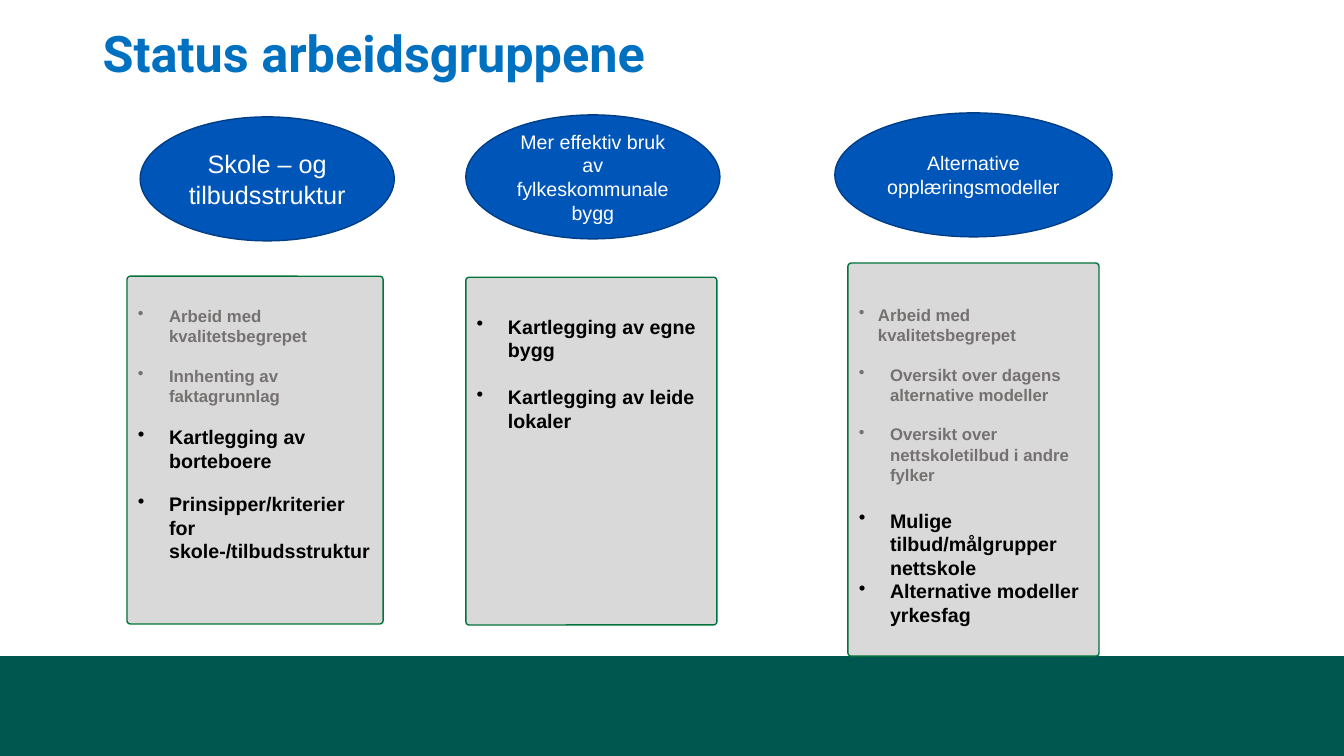
import pptx
import pptx.util
import pptx.dml.color
import pptx.enum.shapes
import pptx.enum.text
import pptx.oxml.ns
import lxml.etree

SHAPES = pptx.enum.shapes.MSO_SHAPE
ALIGN = pptx.enum.text.PP_ALIGN
ANCHOR = pptx.enum.text.MSO_ANCHOR
DONE, OPEN = ("767171", 12), ("000000", 14)

WIDTH, HEIGHT = 13.33, 7.5
BAR_TOP = 6.51
OVAL_HEIGHT = 1.23
INSET = 0.1

# Each item: text, (colour, size), space before, indent
GROUPS = [
    {
        "name": "Skole – og tilbudsstruktur", "size": 18,
        "oval": (1.39, 1.16, 2.52), "card": (1.26, 2.74, 2.54, 3.45), "top": 0.28,
        "items": [
            ("Arbeid med kvalitetsbegrepet", DONE, 0, 0.31),
            ("Innhenting av faktagrunnlag", DONE, 14, 0.31),
            ("Kartlegging av borteboere", OPEN, 14, 0.31),
            ("Prinsipper/kriterier for skole-/tilbudsstruktur", OPEN, 14, 0.31),
        ],
    },
    {
        "name": "Mer effektiv bruk av fylkeskommunale bygg", "size": 14,
        "oval": (4.62, 1.14, 2.52), "card": (4.62, 2.75, 2.49, 3.45), "top": 0.36,
        "items": [
            ("Kartlegging av egne bygg", OPEN, 0, 0.31),
            ("Kartlegging av leide lokaler", OPEN, 17, 0.31),
        ],
    },
    {
        "name": "Alternative opplæringsmodeller", "size": 14,
        "oval": (8.28, 1.12, 2.75), "card": (8.41, 2.61, 2.49, 3.9), "top": 0.4,
        "items": [
            ("Arbeid med kvalitetsbegrepet", DONE, 0, 0.19),
            ("Oversikt over dagens alternative modeller", DONE, 14, 0.31),
            ("Oversikt over nettskoletilbud i andre fylker", DONE, 14, 0.31),
            ("Mulige tilbud/målgrupper nettskole", OPEN, 17, 0.31),
            ("Alternative modeller yrkesfag", OPEN, 0, 0.31),
        ],
    },
]


def colour(value):
    return pptx.dml.color.RGBColor.from_string(value)


def box(*lengths):
    return [pptx.util.Inches(length) for length in lengths]


def add_panel(slide, kind, place, fill, line=None):
    shape = slide.shapes.add_shape(kind, *box(*place))
    shape.shadow.inherit = False
    shape.fill.solid()
    shape.fill.fore_color.rgb = colour(fill)
    if line:
        shape.line.color.rgb = colour(line)
        shape.line.width = pptx.util.Pt(1)
    else:
        shape.line.fill.background()
    return shape


def prepare_frame(shape, anchor, top=0.05):
    frame = shape.text_frame
    frame.word_wrap = True
    frame.vertical_anchor = anchor
    frame.margin_left = frame.margin_right = pptx.util.Inches(INSET)
    frame.margin_top = pptx.util.Inches(top)
    return frame


def write(paragraph, text, size, ink, font="Arial", bold=False,
          align=ALIGN.LEFT, before=0, spacing=1.0, indent=0):
    if indent:
        properties = paragraph._p.get_or_add_pPr()
        properties.set("marL", str(pptx.util.Inches(indent)))
        properties.set("indent", str(-pptx.util.Inches(indent)))
        bullet = lxml.etree.SubElement(properties, pptx.oxml.ns.qn("a:buChar"))
        bullet.set("char", "•")
    paragraph.alignment = align
    paragraph.space_before = pptx.util.Pt(before)
    paragraph.line_spacing = spacing
    run = paragraph.add_run()
    run.text = text
    run.font.name = font
    run.font.size = pptx.util.Pt(size)
    run.font.bold = bold
    run.font.color.rgb = colour(ink)


def add_group(slide, group):
    oval = add_panel(slide, SHAPES.OVAL, (*group["oval"], OVAL_HEIGHT), "0055B8", "003F88")
    frame = prepare_frame(oval, ANCHOR.MIDDLE)
    write(frame.paragraphs[0], group["name"], group["size"], "FFFFFF", align=ALIGN.CENTER)

    card = add_panel(slide, SHAPES.ROUNDED_RECTANGLE, group["card"], "D9D9D9", "00743A")
    card.adjustments[0] = 0.013
    frame = prepare_frame(card, ANCHOR.TOP, group["top"])
    for index, (text, (ink, size), before, indent) in enumerate(group["items"]):
        paragraph = frame.add_paragraph() if index else frame.paragraphs[0]
        write(paragraph, text, size, ink, bold=True, before=before, indent=indent)


def main():
    presentation = pptx.Presentation()
    presentation.slide_width, presentation.slide_height = box(WIDTH, HEIGHT)
    slide = presentation.slides.add_slide(presentation.slide_layouts[6])

    add_panel(slide, SHAPES.RECTANGLE, (0, BAR_TOP, WIDTH, HEIGHT - BAR_TOP), "00574F")
    title = slide.shapes.add_textbox(*box(0.92, 0.08, 11.5, 0.95))
    frame = prepare_frame(title, ANCHOR.MIDDLE)
    write(frame.paragraphs[0], "Status arbeidsgruppene", 36, "0070C0",
          font="Roboto", bold=True, spacing=0.9)
    for group in GROUPS:
        add_group(slide, group)

    presentation.save("out.pptx")


if __name__ == "__main__":
    main()
